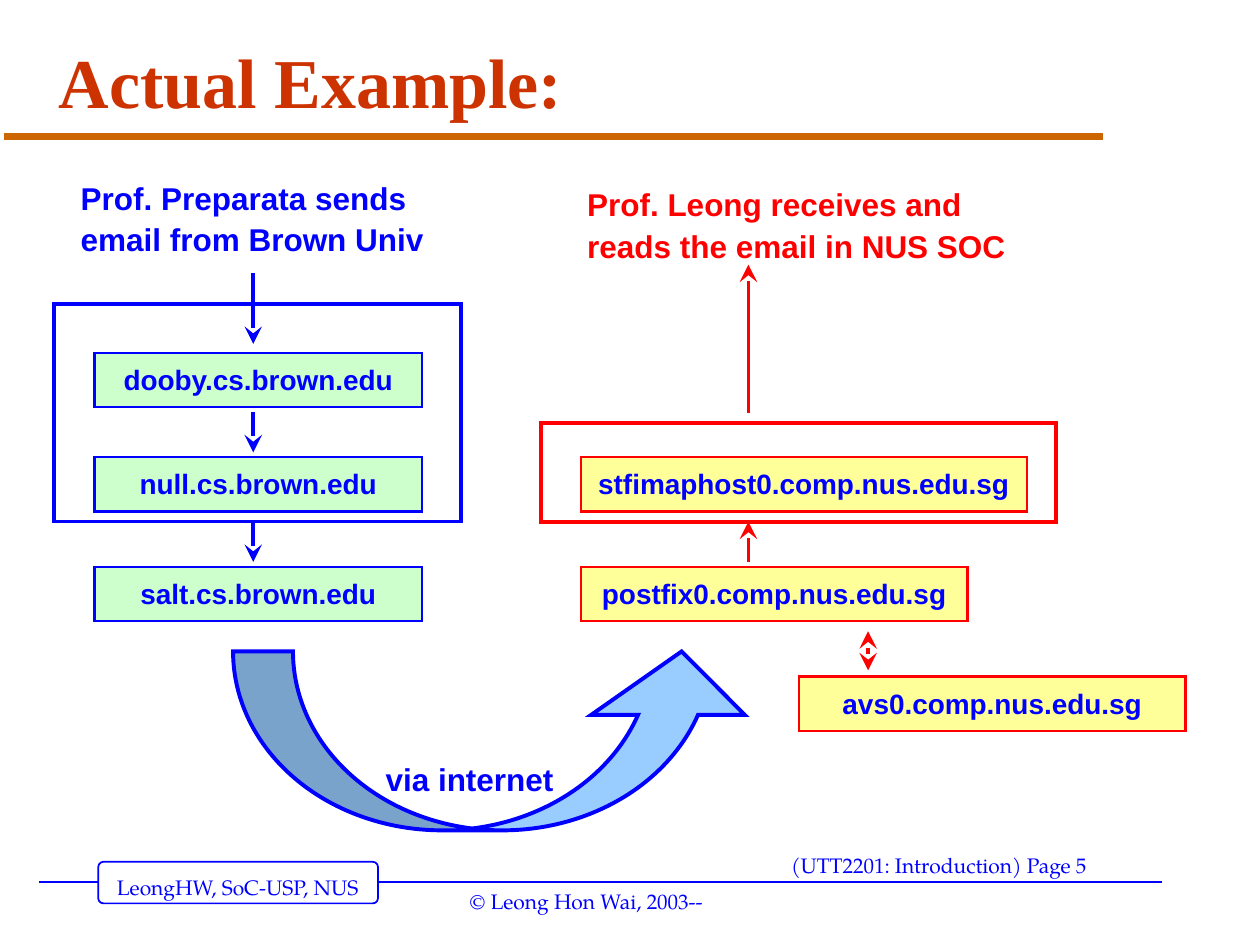
from lxml.etree import SubElement
from pptx import Presentation
from pptx.dml.color import RGBColor
from pptx.enum.shapes import MSO_CONNECTOR, MSO_SHAPE as SHAPE
from pptx.enum.text import MSO_ANCHOR, MSO_AUTO_SIZE, PP_ALIGN
from pptx.oxml.ns import qn
from pptx.util import Inches, Pt

COLORS = {
    "blue": "0000FF", "red": "FF0000", "rust": "CC3300", "orange": "CC6600",
    "green": "CCFFCC", "yellow": "FFFF99", "sky": "99CCFF", "white": "FFFFFF",
}
SERIF, SANS, FOOTER = "Times New Roman", "Arial", "TeX Gyre Pagella"

TITLE = ("Actual Example:", (0.37, 0.36, 8.96, 0.64))
FOOTERS = [
    ("LeongHW, SoC-USP, NUS", (0.83, 6.89, 2.14, 0.3)),
    ("(UTT2201: Introduction) Page 5", (6.18, 6.72, 2.64, 0.3)),
    ("© Leong Hon Wai, 2003--", (3.63, 7, 2.07, 0.3)),
]
CAPTIONS = [
    ("via internet", (3.01, 5.95, 1.45, 0.43), "blue"),
    ("Prof. Preparata sends\nemail from Brown Univ", (0.59, 1.34, 2.85, 0.76), "blue"),
    ("Prof. Leong receives and\nreads the email in NUS SOC", (4.61, 1.39, 3.45, 0.76), "red"),
]
HOST_HEIGHT = 0.43
HOSTS = [  # name, left, top, width, fill, outline
    ("dooby.cs.brown.edu", 0.75, 2.8, 2.6, "green", "blue"),
    ("null.cs.brown.edu", 0.75, 3.63, 2.6, "green", "blue"),
    ("salt.cs.brown.edu", 0.75, 4.5, 2.6, "green", "blue"),
    ("postfix0.comp.nus.edu.sg", 4.61, 4.5, 3.07, "yellow", "red"),
    ("avs0.comp.nus.edu.sg", 6.34, 5.37, 3.07, "yellow", "red"),
    ("stfimaphost0.comp.nus.edu.sg", 4.61, 3.63, 3.54, "yellow", "red"),
]
FRAMES = [((0.43, 2.41, 3.23, 1.73), "blue"), ((4.29, 3.36, 4.09, 0.78), "red")]
ARROWS = [  # x, top, bottom, colour, arrowheads
    (2.01, 2.17, 2.73, "blue", ["tailEnd"]),
    (2.01, 3.27, 3.59, "blue", ["tailEnd"]),
    (2.01, 4.14, 4.46, "blue", ["tailEnd"]),
    (5.94, 2.1, 3.28, "red", ["headEnd"]),
    (5.94, 4.14, 4.46, "red", ["headEnd"]),
    (6.89, 5.01, 5.32, "red", ["headEnd", "tailEnd"]),
]


def rgb(name):
    return RGBColor.from_string(COLORS[name])


def write(shape, text, size, font, color, bold=True, spacing=None,
          align=PP_ALIGN.LEFT, margins=(0.05, 0.05)):
    frame = shape.text_frame
    frame.margin_left = frame.margin_right = Inches(margins[0])
    frame.margin_top = frame.margin_bottom = Inches(margins[1])
    frame.vertical_anchor = MSO_ANCHOR.TOP
    para = frame.paragraphs[0]
    para.alignment = align
    if spacing:
        para.line_spacing = spacing
    for number, line in enumerate(text.split("\n")):
        if number:
            para.add_line_break()
        span = para.add_run()
        span.text = line
        span.font.size, span.font.name, span.font.bold = Pt(size), font, bold
        span.font.color.rgb = rgb(color)
    return frame


def add_label(page, text, place, *style, **layout):
    """Add a one-piece text that keeps its own line breaks."""
    box = page.shapes.add_textbox(*map(Inches, place))
    frame = write(box, text, *style, **layout)
    frame.word_wrap = False
    frame.auto_size = MSO_AUTO_SIZE.SHAPE_TO_FIT_TEXT


def add_box(page, kind, place, fill, outline, width):
    box = page.shapes.add_shape(kind, *map(Inches, place))
    box.shadow.inherit = False
    if fill:
        box.fill.solid()
        box.fill.fore_color.rgb = rgb(fill)
    else:
        box.fill.background()
    box.line.color.rgb = rgb(outline)
    box.line.width = Pt(width)
    SubElement(box.line._get_or_add_ln(), qn("a:miter"), lim="800000")
    return box


def add_line(page, start, end, color, width, heads=()):
    line = page.shapes.add_connector(
        MSO_CONNECTOR.STRAIGHT, *map(Inches, start + end))
    line.line.color.rgb = rgb(color)
    line.line.width = Pt(width)
    outline = line.line._get_or_add_ln()
    for head in heads:
        SubElement(outline, qn(f"a:{head}"), type="stealth", w="lg", len="lg")
    SubElement(line._element.spPr, qn("a:effectLst"))


def add_master_parts(page):
    add_line(page, (0.31, 7), (9.22, 7), "blue", 1)
    badge = add_box(page, SHAPE.ROUNDED_RECTANGLE, (0.78, 6.84, 2.22, 0.33),
                    "white", "blue", 1)
    badge.adjustments[0] = 0.125
    add_line(page, (0.03, 1.08), (8.75, 1.08), "orange", 4)
    for text, place in FOOTERS:
        add_label(page, text, place, 12, FOOTER, "blue", bold=False,
                  margins=(0.1, 0.05))


def add_title(page):
    text, place = TITLE
    box = page.shapes.add_textbox(*map(Inches, place))
    frame = write(box, text, 40, SERIF, "rust", spacing=0.9, margins=(0.1, 0.05))
    frame.word_wrap = True
    frame.vertical_anchor = MSO_ANCHOR.MIDDLE


def add_mail_route(page):
    for name, left, top, width, fill, outline in HOSTS:
        host = add_box(page, SHAPE.RECTANGLE, (left, top, width, HOST_HEIGHT),
                       fill, outline, 1.25)
        write(host, name, 16, SANS, "blue", spacing=1.1, align=PP_ALIGN.CENTER)
    internet = add_box(page, SHAPE.CURVED_UP_ARROW, (1.85, 5.17, 4.17, 1.42),
                       "sky", "blue", 2.25)
    for index, value in enumerate((0.335, 0.859, 0.355)):
        internet.adjustments[index] = value
    for place, color in FRAMES:
        add_box(page, SHAPE.RECTANGLE, place, None, color, 2.25)
    for x, top, bottom, color, heads in ARROWS:
        add_line(page, (x, top), (x, bottom), color, 2, heads)
    for text, place, color in CAPTIONS:
        add_label(page, text, place, 18, SANS, color, spacing=1.1)


def main():
    deck = Presentation()
    deck.slide_width, deck.slide_height = Inches(10), Inches(7.5)
    page = deck.slides.add_slide(deck.slide_layouts[6])
    add_master_parts(page)
    add_title(page)
    add_mail_route(page)
    deck.save("out.pptx")


if __name__ == "__main__":
    main()
